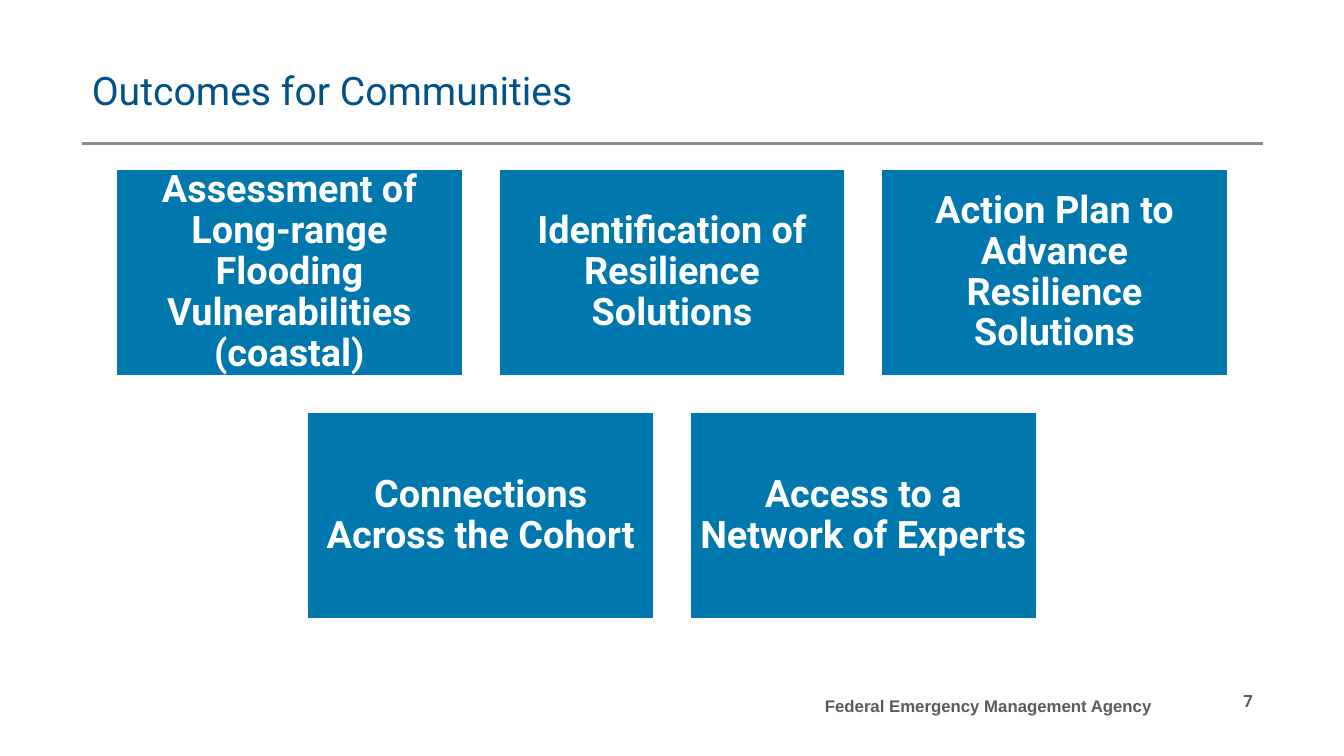
from lxml.etree import SubElement
from pptx import Presentation
from pptx.dml.color import RGBColor
from pptx.enum.shapes import MSO_CONNECTOR as Connector, MSO_SHAPE as Shape
from pptx.enum.text import MSO_ANCHOR as Anchor, PP_ALIGN as Align
from pptx.oxml.ns import qn
from pptx.util import Cm, Pt

TITLE = "Outcomes for Communities"
OUTCOME_ROWS = [
    [
        "Assessment of Long-range Flooding Vulnerabilities (coastal)",
        "Identification of Resilience Solutions",
        "Action Plan to Advance Resilience Solutions",
    ],
    ["Connections Across the Cohort", "Access to a Network of Experts"],
]
AGENCY = "Federal Emergency Management Agency"
PAGE_NUMBER = "7"

COLORS = {
    "title": "005288",
    "box": "0078AE",
    "white": "FFFFFF",
    "rule": "8A8C8F",
    "footer": "5A5B5D",
}
SLIDE_WIDTH, SLIDE_HEIGHT = 33.87, 19.05
LEFT, RIGHT = 2.06, 31.83
BOX_WIDTH, BOX_HEIGHT, GAP = 8.76, 5.25, 0.88
BOXES_TOP = 4.24
FOOTER_TOP, FOOTER_HEIGHT = 17.15, 1.02


def color(name):
    return RGBColor.from_string(COLORS[name])


def write(shape, text, size, color_name, align, font="Roboto", bold=False, spacing=1.0):
    frame = shape.text_frame
    frame.word_wrap = True
    frame.vertical_anchor = Anchor.MIDDLE
    paragraph = frame.paragraphs[0]
    paragraph.text = text
    paragraph.alignment = align
    paragraph.line_spacing = spacing
    paragraph.font.name = font
    paragraph.font.size = Pt(size)
    paragraph.font.bold = bold
    paragraph.font.color.rgb = color(color_name)


def add_rule(slide):
    rule = slide.shapes.add_connector(
        Connector.STRAIGHT, Cm(LEFT), Cm(3.61), Cm(RIGHT), Cm(3.61))
    rule.line.color.rgb = color("rule")
    rule.line.width = Pt(2)
    SubElement(rule._element.spPr, qn("a:effectLst"))


def add_outcome(slide, text, left, top):
    box = slide.shapes.add_shape(
        Shape.RECTANGLE, Cm(left), Cm(top), Cm(BOX_WIDTH), Cm(BOX_HEIGHT))
    box.shadow.inherit = False
    box.fill.solid()
    box.fill.fore_color.rgb = color("box")
    box.line.color.rgb = color("white")
    box.line.width = Pt(2)
    frame = box.text_frame
    frame.margin_left = frame.margin_right = Cm(0.27)
    frame.margin_top = frame.margin_bottom = Cm(0.27)
    write(box, text, 27, "white", Align.CENTER, bold=True, spacing=0.9)


def add_footer(slide, text, left, width, **style):
    box = slide.shapes.add_textbox(
        Cm(left), Cm(FOOTER_TOP), Cm(width), Cm(FOOTER_HEIGHT))
    write(box, text, 12, "footer", Align.RIGHT, bold=True, **style)


def main():
    presentation = Presentation()
    presentation.slide_width = Cm(SLIDE_WIDTH)
    presentation.slide_height = Cm(SLIDE_HEIGHT)
    slide = presentation.slides.add_slide(presentation.slide_layouts[5])

    title = slide.shapes.title
    title.left, title.top = Cm(LEFT), Cm(1.24)
    title.width, title.height = Cm(RIGHT - LEFT), Cm(2.06)
    write(title, TITLE, 28, "title", Align.LEFT)
    add_rule(slide)

    for row, outcomes in enumerate(OUTCOME_ROWS):
        row_width = len(outcomes) * (BOX_WIDTH + GAP) - GAP
        row_left = (SLIDE_WIDTH - row_width) / 2
        top = BOXES_TOP + row * (BOX_HEIGHT + GAP)
        for column, outcome in enumerate(outcomes):
            add_outcome(slide, outcome, row_left + column * (BOX_WIDTH + GAP), top)

    add_footer(slide, AGENCY, 16.94, 12.34, font="Arial", spacing=1.5)
    add_footer(slide, PAGE_NUMBER, 29.29, 2.54)
    presentation.save("out.pptx")


if __name__ == "__main__":
    main()
